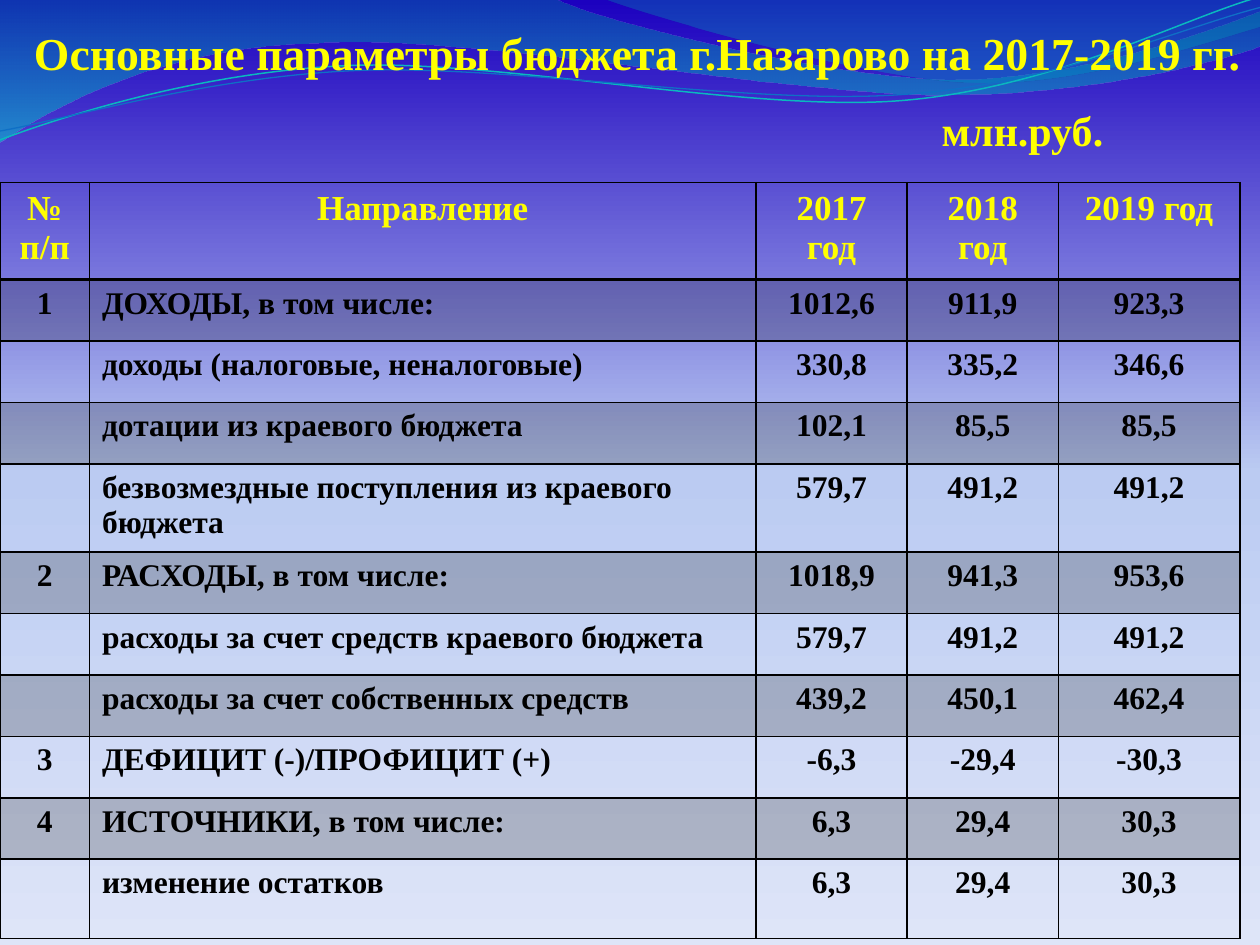
from dataclasses import dataclass
from math import cos, radians, sin

from lxml import etree
from pptx import Presentation
from pptx.dml.color import RGBColor
from pptx.enum.text import MSO_ANCHOR, PP_ALIGN
from pptx.oxml.ns import qn
from pptx.util import Inches, Pt

LEFT, CENTER = PP_ALIGN.LEFT, PP_ALIGN.CENTER
TOP, BOTTOM = MSO_ANCHOR.TOP, MSO_ANCHOR.BOTTOM
GRID_COLS, GRID_ROWS = 10, 7.5
UNIT = Inches(1)
TILT = -2.7


@dataclass(frozen=True)
class Theme:
    """Colours and type sizes of the slide."""
    font: str = "Times New Roman"
    accent: str = "FFFF00"
    ink: str = "000000"
    title: float = 26.1
    unit: float = 24
    header: float = 20
    body: float = 18
    band_opacity: int = 20
    background: tuple = ((0, "1C01BF", 100), (50, "BBCBF2", 100), (100, "DEE5F8", 100))
    wide_wave: tuple = ((0, "0074A1", 45), (100, "00C6CF", 55))
    right_wave: tuple = ((0, "00A1A9", 30), (80, "008BBF", 45))
    upper_line: tuple = ("0AB8BF", 0.85)
    lower_line: tuple = ("0F6FC6", 0.75)


THEME = Theme()

WIDE_WAVE = [(0, 0), (4.4, -0.01), (4.76, 0.17, 6.64, 0.63, 7.58, 0.63),
             (8.53, 0.63, 9.58, 0.26, 10, 0.09), (10.01, 0.36),
             (9.83, 0.44, 8.7, 0.76, 7.46, 0.75), (6.22, 0.75, 3.82, 0.28, 2.57, 0.34),
             (1.29, 0.36, 0.46, 0.83, -0.01, 1.13), (0, 0)]
RIGHT_WAVE = [(4.79, -0.01), (5.09, 0.11, 6.82, 0.62, 7.69, 0.65),
              (8.56, 0.69, 9.61, 0.32, 10, 0.21), (10, 0), (4.79, -0.01)]
UPPER_LINE = [(0, 1.11), (0.48, 0.93, 1.58, 0.57, 2.77, 0.52),
              (3.95, 0.47, 5.93, 0.89, 7.13, 0.8), (8.33, 0.71, 9.38, 0.15, 9.98, -0.02)]
LOWER_LINE = [(0, 1.04), (0.47, 0.96, 1.64, 0.61, 2.83, 0.56),
              (4.03, 0.51, 5.97, 0.84, 7.17, 0.75), (8.36, 0.67, 9.41, 0.21, 10, 0.06)]

COLUMNS = [0.71, 5.29, 1.2, 1.2, 1.44]
HEADER_HEIGHT, WRAPPED_HEIGHT, LAST_HEIGHT = 0.77, 0.7, 0.63
TABLE_HEIGHT, WRAPPED_ROW = 6, 4
BUDGET = [
    ("№ п/п", "Направление", "2017 год", "2018 год", "2019 год"),
    ("1", "ДОХОДЫ, в том числе:", "1012,6", "911,9", "923,3"),
    ("", "доходы (налоговые, неналоговые)", "330,8", "335,2", "346,6"),
    ("", "дотации из краевого бюджета", "102,1", "85,5", "85,5"),
    ("", "безвозмездные поступления из краевого бюджета", "579,7", "491,2", "491,2"),
    ("2", "РАСХОДЫ, в том числе:", "1018,9", "941,3", "953,6"),
    ("", "расходы за счет средств краевого бюджета", "579,7", "491,2", "491,2"),
    ("", "расходы за счет собственных средств", "439,2", "450,1", "462,4"),
    ("3", "ДЕФИЦИТ (-)/ПРОФИЦИТ (+)", "-6,3", "-29,4", "-30,3"),
    ("4", "ИСТОЧНИКИ, в том числе:", "6,3", "29,4", "30,3"),
    ("", "изменение остатков", "6,3", "29,4", "30,3"),
]


def grid(*values):
    """Turn grid units into slide lengths."""
    return [round(v * UNIT) for v in values]


def set_attrs(target, values):
    """Set attributes from a dict of format values."""
    for name, value in values.items():
        setattr(target, name, value)


def add_color(parent, color, opacity):
    """Add a colour with an opacity in percent."""
    clr = etree.SubElement(parent, qn("a:srgbClr"), val=color)
    if opacity < 100:
        etree.SubElement(clr, qn("a:alpha"), val=str(opacity * 1000))


def fill_gradient(fill, element, stops):
    """Fill from top to bottom with the given stops."""
    fill.gradient()
    fill.gradient_angle = 270
    gs_list = element.find(".//" + qn("a:gsLst"))
    for gs in list(gs_list):
        gs_list.remove(gs)
    for pos, color, opacity in stops:
        add_color(etree.SubElement(gs_list, qn("a:gs"), pos=str(pos * 1000)), color, opacity)


def turn(point, center, degrees):
    """Turn a point clockwise around a center."""
    x, y = (p - c for p, c in zip(point, center))
    c, s = cos(radians(degrees)), sin(radians(degrees))
    return center[0] + x * c - y * s, center[1] + x * s + y * c


def add_outline(s, outline, close, center=(0, 0), tilt=0):
    """Add a freeform of lines and Bezier curves without a shadow."""
    start, *rest = [grid(*turn(point, center, -tilt)) for segment in outline
                    for point in zip(segment[::2], segment[1::2])]
    builder = s.shapes.build_freeform(*start)
    builder.add_line_segments(rest, close=close)
    sp = builder.convert_to_shape()
    steps = iter(sp.element.findall(".//" + qn("a:lnTo")))
    for segment in outline[1:]:
        step = next(steps)
        if len(segment) == 6:
            step.addprevious(curve := etree.Element(qn("a:cubicBezTo")))
            for ctrl in (step, next(steps), next(steps)):
                curve.append(ctrl[0])
                ctrl.getparent().remove(ctrl)
    sp.rotation = tilt
    sp.shadow.inherit = False
    return sp


def add_wave(s, outline, stops):
    """Add a filled wave."""
    sp = add_outline(s, outline, True)
    fill_gradient(sp.fill, sp.element, stops)
    sp.line.fill.background()


def add_wave_line(s, outline, center, style):
    """Add a thin tilted curve."""
    color, width = style
    sp = add_outline(s, outline, False, center, TILT)
    sp.fill.background()
    sp.line.color.rgb = RGBColor.from_string(color)
    sp.line.width = Pt(width)


def write(tf, text, size, color, align):
    """Write one bold paragraph."""
    p = tf.paragraphs[0]
    p.alignment = align
    r = p.add_run()
    r.text = text
    set_attrs(r.font, {"name": THEME.font, "size": Pt(size), "bold": True})
    r.font.color.rgb = RGBColor.from_string(color)


def add_text(s, box, text, size, align, frame):
    """Add a text box placed on the grid."""
    tf = s.shapes.add_textbox(*grid(*box)).text_frame
    set_attrs(tf, {"word_wrap": True, **frame})
    write(tf, text, size, THEME.accent, align)


def set_borders(cell, top, bottom):
    """Draw the four cell borders."""
    tc_pr = cell._tc.get_or_add_tcPr()
    for side, width in {"L": 1, "R": 1, "T": top, "B": bottom}.items():
        ln = etree.SubElement(tc_pr, qn("a:ln" + side), w=str(Pt(width)))
        add_color(etree.SubElement(ln, qn("a:solidFill")), THEME.ink, 100)


def fill_cell(cell, banded):
    """Shade a banded cell and leave the others clear."""
    if not banded:
        cell.fill.background()
        return
    cell.fill.solid()
    cell.fill.fore_color.rgb = RGBColor.from_string(THEME.ink)
    clr = cell._tc.tcPr.find(qn("a:solidFill")).find(qn("a:srgbClr"))
    etree.SubElement(clr, qn("a:alpha"), val=str(THEME.band_opacity * 1000))


def row_heights():
    """Share the height left by the special rows among the others."""
    special = {0: HEADER_HEIGHT, WRAPPED_ROW: WRAPPED_HEIGHT, len(BUDGET) - 1: LAST_HEIGHT}
    plain = (TABLE_HEIGHT - sum(special.values())) / (len(BUDGET) - len(special))
    return [special.get(i, plain) for i in range(len(BUDGET))]


def add_budget_table(s, left, top):
    """Add the budget table with its header and bands."""
    box = grid(left, top, sum(COLUMNS), TABLE_HEIGHT)
    table = s.shapes.add_table(len(BUDGET), len(COLUMNS), *box).table
    set_attrs(table, {"first_row": False, "horz_banding": False})
    for column, width in zip(table.columns, grid(*COLUMNS)):
        column.width = width
    for i, (row, height) in enumerate(zip(table.rows, grid(*row_heights()))):
        row.height = height
        header = i == 0
        size, color = (THEME.header, THEME.accent) if header else (THEME.body, THEME.ink)
        for j, (cell, text) in enumerate(zip(row.cells, BUDGET[i])):
            set_borders(cell, 2 if i == 1 else 1, 2 if header else 1)
            fill_cell(cell, i % 2 == 1)
            if text:
                write(cell.text_frame, text, size, color,
                      LEFT if j == 1 and not header else CENTER)


def main():
    """Build the budget slide."""
    prs = Presentation()
    prs.slide_width, prs.slide_height = grid(GRID_COLS, GRID_ROWS)
    s = prs.slides.add_slide(prs.slide_layouts[6])
    fill_gradient(s.background.fill, s.element, THEME.background)
    add_wave(s, WIDE_WAVE, THEME.wide_wave)
    add_wave(s, RIGHT_WAVE, THEME.right_wave)
    add_wave_line(s, UPPER_LINE, (4.99, 0.58), THEME.upper_line)
    add_wave_line(s, LOWER_LINE, (5, 0.59), THEME.lower_line)
    add_text(s, (0, 0.08, GRID_COLS, 0.55),
             "Основные параметры бюджета г.Назарово на 2017-2019 гг.", THEME.title, LEFT,
             {"vertical_anchor": BOTTOM, "margin_left": Inches(0.27),
              "margin_right": 0, "margin_bottom": 0})
    add_text(s, (6.88, 0.78, 2.47, 0.5), "млн.руб.", THEME.unit, CENTER,
             {"vertical_anchor": TOP})
    add_budget_table(s, 0, 1.45)
    prs.save("out.pptx")


if __name__ == "__main__":
    main()
